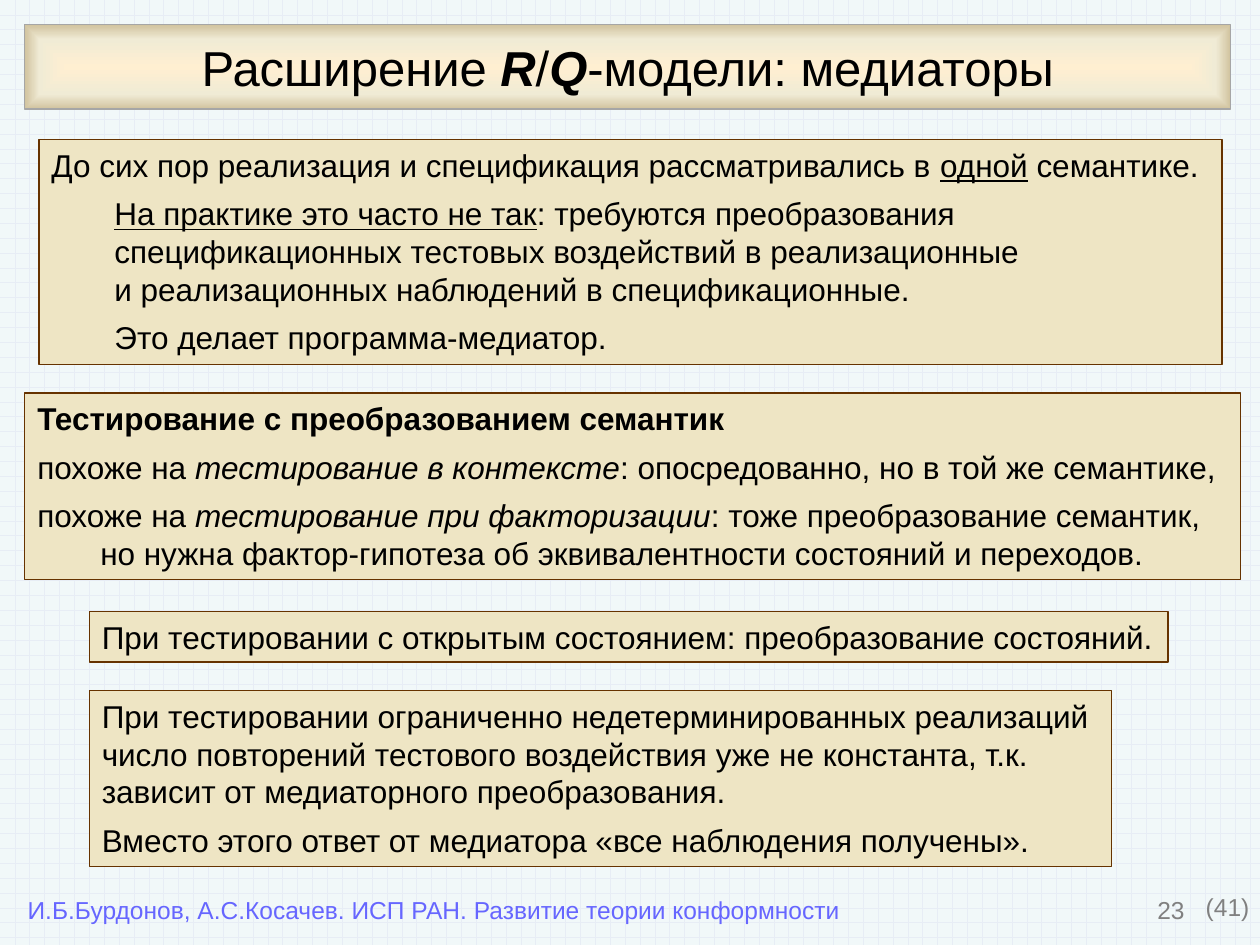
"""Build a slide on mediators as an extension of the R/Q model."""
from dataclasses import dataclass

from pptx import Presentation
from pptx.dml.color import RGBColor as RGB
from pptx.enum.dml import MSO_PATTERN
from pptx.enum.shapes import MSO_SHAPE
from pptx.enum.text import MSO_ANCHOR as ANCHOR, MSO_AUTO_SIZE as AUTO, PP_ALIGN as ALIGN
from pptx.oxml import parse_xml
from pptx.oxml.ns import nsdecls, qn
from pptx.util import Pt


@dataclass(frozen=True)
class Theme:
    font: str = "Arial"
    title_size: int = 28
    body_size: int = 18
    foot_size: int = 14
    text: str = "000000"
    box: str = "EEE5C4"
    box_line: str = "663300"
    title_line: str = "A6A6A6"
    title_stops: tuple = ((0, "FFEFD1"), (65, "F0EBD5"), (100, "D1C39F"))
    grid: str = "E7EDF5"
    paper: str = "F1F8F9"
    number: str = "808080"
    credit: str = "6666FF"


T = Theme()


def write(p, runs, size, color):
    p.font.name, p.font.size = T.font, Pt(size)
    p.font.color.rgb = RGB.from_string(color)
    for text, style in runs:
        for i, line in enumerate(text.split("\n")):
            if i:
                p.add_line_break()
            r = p.add_run()
            r.text = line
            if "b" in style:
                r.font.bold = True
            if "i" in style:
                r.font.italic = True
            if "u" in style:
                r.font.underline = True


def outline(shape, color):
    shape.line.color.rgb = RGB.from_string(color)
    shape.line.width = Pt(0.75)


prs = Presentation()
prs.slide_width, prs.slide_height = Pt(720), Pt(540)
s = prs.slides.add_slide(prs.slide_layouts[5])
bg = s.background.fill
bg.patterned()
bg.pattern = MSO_PATTERN.HORIZONTAL_BRICK
bg.fore_color.rgb = RGB.from_string(T.grid)
bg.back_color.rgb = RGB.from_string(T.paper)

title = s.shapes.title
title.left, title.top, title.width, title.height = Pt(14.2), Pt(14.2), Pt(689), Pt(48.2)
title.fill.gradient()
stops = "".join(
    f'<a:gs pos="{pos * 1000}"><a:srgbClr val="{color}"/></a:gs>' for pos, color in T.title_stops
)
old_grad = title._element.spPr.find(qn("a:gradFill"))
old_grad.getparent().replace(old_grad, parse_xml(
    f'<a:gradFill {nsdecls("a")}><a:gsLst>{stops}</a:gsLst><a:path path="shape">'
    '<a:fillToRect l="50000" t="50000" r="50000" b="50000"/></a:path></a:gradFill>'
))
outline(title, T.title_line)
tf = title.text_frame
tf.word_wrap, tf.auto_size, tf.vertical_anchor = False, AUTO.NONE, ANCHOR.MIDDLE
tf.margin_left = tf.margin_right = tf.margin_top = tf.margin_bottom = Pt(7.2)
tf.paragraphs[0].alignment = ALIGN.CENTER
write(tf.paragraphs[0], [("Расширение ", ""), ("R", "bi"), ("/", ""), ("Q", "bi"),
                         ("-модели: медиаторы", "")], T.title_size, T.text)

boxes = [
    ((22.3, 79.9, 676, 128.2), [
        (0, 6, [("До сих пор реализация и спецификация рассматривались в ", ""),
                ("одной", "u"), (" семантике.", "")]),
        (1, 6, [("На практике это часто не так", "u"),
                (": требуются преобразования\n"
                 "спецификационных тестовых воздействий в реализационные\n"
                 "и реализационных наблюдений в спецификационные.", "")]),
        (1, 6, [("Это делает программа-медиатор.", "")]),
    ]),
    ((14.2, 224.6, 694.8, 106.6), [
        (0, 6, [("Тестирование с преобразованием семантик", "b")]),
        (0, 6, [("похоже на ", ""), ("тестирование в контексте", "i"),
                (": опосредованно, но в той же семантике,", "")]),
        (0, 6, [("похоже на ", ""), ("тестирование при факторизации", "i"),
                (": тоже преобразование семантик,", "")]),
        (1, 0, [("но нужна фактор-гипотеза об эквивалентности состояний и переходов.", "")]),
    ]),
    ((51.1, 349.5, 616.3, 28.8), [
        (0, 6, [("При тестировании с открытым состоянием: преобразование состояний.", "")]),
    ]),
    ((51.1, 394.6, 584, 100.6), [
        (0, 6, [("При тестировании ограниченно недетерминированных реализаций\n"
                 "число повторений тестового воздействия уже не константа, т.к.\n"
                 "зависит от медиаторного преобразования.", "")]),
        (0, 6, [("Вместо этого ответ от медиатора «все наблюдения получены».", "")]),
    ]),
]
for place, paragraphs in boxes:
    sp = s.shapes.add_shape(MSO_SHAPE.RECTANGLE, *map(Pt, place))
    sp.shadow.inherit = False
    sp.fill.solid()
    sp.fill.fore_color.rgb = RGB.from_string(T.box)
    outline(sp, T.box_line)
    tf = sp.text_frame
    tf.word_wrap, tf.auto_size, tf.vertical_anchor = False, AUTO.SHAPE_TO_FIT_TEXT, ANCHOR.TOP
    for i, (level, gap, runs) in enumerate(paragraphs):
        p = tf.add_paragraph() if i else tf.paragraphs[0]
        p.level, p.alignment, p.space_before = level, ALIGN.LEFT, Pt(gap)
        p._p.get_or_add_pPr().set("marL", str(Pt(36 * level)))
        write(p, runs, T.body_size, T.text)

footers = [
    ((516.2, 507.6, 167.8, 37.4), "23", T.number, ALIGN.RIGHT, True),
    ((689, 509.8, 25.2, 16.6), "(41)", T.number, ALIGN.LEFT, False),
    ((15.8, 511.2, 467.3, 17.3), "И.Б.Бурдонов, А.С.Косачев. ИСП РАН. Развитие теории конформности",
     T.credit, ALIGN.LEFT, False),
]
for place, text, color, align, padded in footers:
    tf = s.shapes.add_textbox(*map(Pt, place)).text_frame
    tf.word_wrap = padded
    if not padded:
        tf.auto_size = AUTO.SHAPE_TO_FIT_TEXT
        tf.margin_left = tf.margin_right = tf.margin_top = tf.margin_bottom = 0
    tf.paragraphs[0].alignment = align
    write(tf.paragraphs[0], [(text, "")], T.foot_size, color)

prs.save("out.pptx")
